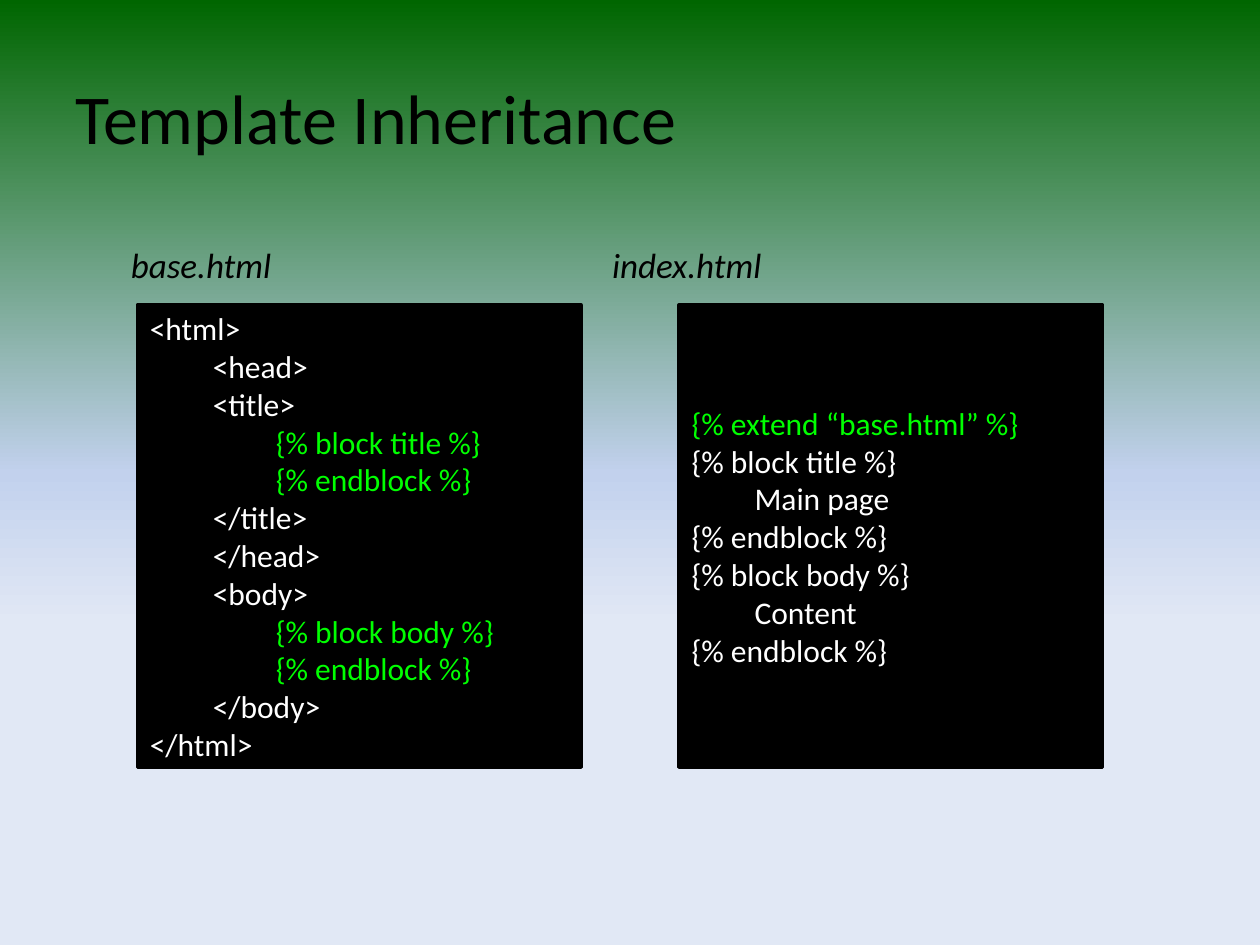
from copy import deepcopy

from pptx import Presentation
from pptx.dml.color import RGBColor
from pptx.enum.shapes import MSO_SHAPE
from pptx.enum.text import MSO_ANCHOR, PP_ALIGN
from pptx.util import Inches, Pt

RECTANGLE = MSO_SHAPE.RECTANGLE
MIDDLE, TOP = MSO_ANCHOR.MIDDLE, MSO_ANCHOR.TOP
LEFT = PP_ALIGN.LEFT

BLACK, WHITE, GREEN = "000000", "FFFFFF", "00FF00"
BACKGROUND = [(0, "006600"), (0.5, "C2D1ED"), (0.66, "E1E8F5")]
INDENT = 0.5

# Each line is (indent level, text, colour)
TITLE = [(0, "Template Inheritance", BLACK)]
BASE_CODE = [
    (0, "<html>", WHITE),
    (1, "<head>", WHITE),
    (1, "<title>", WHITE),
    (2, "{% block title %}", GREEN),
    (2, "{% endblock %}", GREEN),
    (1, "</title>", WHITE),
    (1, "</head>", WHITE),
    (1, "<body>", WHITE),
    (2, "{% block body %}", GREEN),
    (2, "{% endblock %}", GREEN),
    (1, "</body>", WHITE),
    (0, "</html>", WHITE),
]
INDEX_CODE = [
    (0, "{% extend “base.html” %}", GREEN),
    (0, "{% block title %}", WHITE),
    (1, "Main page", WHITE),
    (0, "{% endblock %}", WHITE),
    (0, "{% block body %}", WHITE),
    (1, "Content", WHITE),
    (0, "{% endblock %}", WHITE),
]
# (file name, label left, panel left, panel width, code)
FILES = [
    ("base.html", 0.94, 1.09, 3.52, BASE_CODE),
    ("index.html", 4.76, 5.39, 3.36, INDEX_CODE),
]
LABEL_TOP, LABEL_WIDTH, LABEL_HEIGHT = 1.88, 2, 0.44
PANEL_TOP, PANEL_HEIGHT = 2.42, 3.67


def color(value):
    return RGBColor.from_string(value)


def paint_background(page):
    fill = page.background.fill
    fill.gradient()
    fill.gradient_angle = 270
    first = fill.gradient_stops[0]._gs
    first.addnext(deepcopy(first))
    for stop, (position, value) in zip(fill.gradient_stops, BACKGROUND):
        stop.position = position
        stop.color.rgb = color(value)


def write(shape, lines, anchor, **font_format):
    frame = shape.text_frame
    frame.word_wrap = True
    frame.vertical_anchor = anchor
    for number, (level, text, value) in enumerate(lines):
        para = frame.add_paragraph() if number else frame.paragraphs[0]
        para.alignment = LEFT
        para.level = level
        properties = para._p.get_or_add_pPr()
        properties.set("marL", str(Inches(INDENT * level)))
        properties.set("indent", "0")
        span = para.add_run()
        span.text = text
        span.font.color.rgb = color(value)
        for name, setting in {"name": "Calibri", **font_format}.items():
            setattr(span.font, name, setting)


def add_text(page, place, lines, anchor, **font_format):
    box = page.shapes.add_textbox(*map(Inches, place))
    write(box, lines, anchor, **font_format)


def add_code_panel(page, place, code):
    panel = page.shapes.add_shape(RECTANGLE, *map(Inches, place))
    panel.shadow.inherit = False
    panel.fill.solid()
    panel.fill.fore_color.rgb = color(BLACK)
    panel.line.color.rgb = color(BLACK)
    panel.line.width = Pt(2)
    write(panel, code, MIDDLE, size=Pt(18))


def main():
    deck = Presentation()
    deck.slide_width, deck.slide_height = Inches(10), Inches(7.5)
    page = deck.slides.add_slide(deck.slide_layouts[6])
    paint_background(page)
    add_text(page, (0.5, 0.3, 9, 1.25), TITLE, MIDDLE, size=Pt(40))
    for name, label_left, panel_left, width, code in FILES:
        label_place = (label_left, LABEL_TOP, LABEL_WIDTH, LABEL_HEIGHT)
        add_text(page, label_place, [(0, name, BLACK)], TOP,
                 size=Pt(20), italic=True)
        add_code_panel(page, (panel_left, PANEL_TOP, width, PANEL_HEIGHT), code)
    deck.save("out.pptx")


if __name__ == "__main__":
    main()
